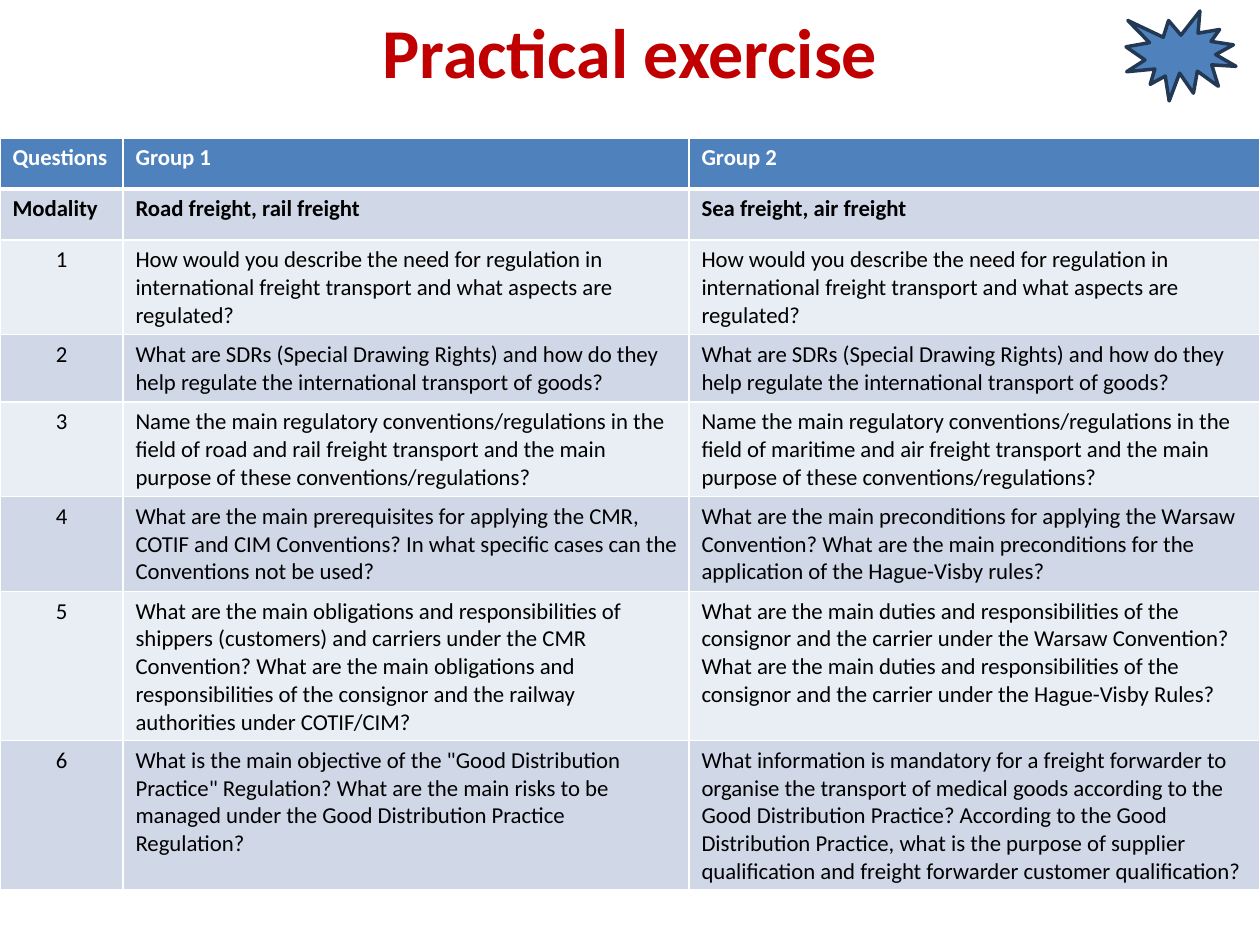
from dataclasses import dataclass
from typing import NamedTuple

from lxml.etree import SubElement
from pptx import Presentation
from pptx.dml.color import RGBColor
from pptx.enum.shapes import MSO_SHAPE as Preset
from pptx.enum.text import MSO_ANCHOR as Anchor, PP_ALIGN as Align
from pptx.oxml.ns import qn
from pptx.util import Emu, Pt


@dataclass(frozen=True)
class Theme:
    font: str = "Calibri"
    title_size: int = 40
    body_size: int = 13
    title: str = "C00000"
    accent: str = "4F81BD"
    outline: str = "233953"
    white: str = "FFFFFF"
    black: str = "000000"
    bands: tuple[str, str] = ("E9EDF4", "D0D8E8")


class Box(NamedTuple):
    left: int
    top: int
    width: int
    height: int


class Row(NamedTuple):
    label: str
    group_1: str
    group_2: str


THEME = Theme()
PX_PER_INCH = 126
SLIDE = (1260, 945)
TITLE_BOX = Box(63, 1, 1134, 100)
STAR_BOX = Box(1126, 11, 110, 90)
TABLE_BOX = Box(0, 138, 1260, 751)
COLUMN_WIDTHS = (123, 566, 571)
ROW_HEIGHT = 51
HEADING_ROWS = 2

REGULATION = (
    "How would you describe the need for regulation in international freight "
    "transport and what aspects are regulated?"
)
DRAWING_RIGHTS = (
    "What are SDRs (Special Drawing Rights) and how do they help regulate the "
    "international transport of goods?"
)
ROWS = (
    Row("Questions", "Group 1", "Group 2"),
    Row("Modality", "Road freight, rail freight", "Sea freight, air freight"),
    Row("1", REGULATION, REGULATION),
    Row("2", DRAWING_RIGHTS, DRAWING_RIGHTS),
    Row(
        "3",
        "Name the main regulatory conventions/regulations in the field of road and "
        "rail freight transport and the main purpose of these conventions/regulations?",
        "Name the main regulatory conventions/regulations in the field of maritime and "
        "air freight transport and the main purpose of these conventions/regulations?",
    ),
    Row(
        "4",
        "What are the main prerequisites for applying the CMR, COTIF and CIM "
        "Conventions? In what specific cases can the Conventions not be used?",
        "What are the main preconditions for applying the Warsaw Convention? What are "
        "the main preconditions for the application of the Hague-Visby rules?",
    ),
    Row(
        "5",
        "What are the main obligations and responsibilities of shippers (customers) "
        "and carriers under the CMR Convention? What are the main obligations and "
        "responsibilities of the consignor and the railway authorities under COTIF/CIM?",
        "What are the main duties and responsibilities of the consignor and the carrier "
        "under the Warsaw Convention? What are the main duties and responsibilities of "
        "the consignor and the carrier under the Hague-Visby Rules?",
    ),
    Row(
        "6",
        'What is the main objective of the "Good Distribution Practice" Regulation? '
        "What are the main risks to be managed under the Good Distribution Practice "
        "Regulation?",
        "What information is mandatory for a freight forwarder to organise the transport "
        "of medical goods according to the Good Distribution Practice? According to the "
        "Good Distribution Practice, what is the purpose of supplier qualification and "
        "freight forwarder customer qualification?",
    ),
)


def px(length: int) -> Emu:
    return Emu(round(length * 914400 / PX_PER_INCH))


def place(box: Box) -> tuple[Emu, ...]:
    return tuple(px(length) for length in box)


def add_run(paragraph, text: str, size: int, color: str, bold: bool) -> None:
    run = paragraph.add_run()
    run.text = text
    run.font.name = THEME.font
    run.font.size = Pt(size)
    run.font.bold = bold
    run.font.color.rgb = RGBColor.from_string(color)


def add_title(slide, text: str) -> None:
    frame = slide.shapes.add_textbox(*place(TITLE_BOX)).text_frame
    frame.word_wrap = True
    frame.vertical_anchor = Anchor.MIDDLE
    paragraph = frame.paragraphs[0]
    paragraph.alignment = Align.CENTER
    add_run(paragraph, text, THEME.title_size, THEME.title, True)


def add_star(slide) -> None:
    shape = slide.shapes.add_shape(Preset.EXPLOSION1, *place(STAR_BOX))
    shape.shadow.inherit = False
    shape.fill.solid()
    shape.fill.fore_color.rgb = RGBColor.from_string(THEME.accent)
    shape.line.color.rgb = RGBColor.from_string(THEME.outline)
    shape.line.width = Pt(2)


def set_borders(cell, top: int, bottom: int) -> None:
    properties = cell._tc.get_or_add_tcPr()
    for side, width in (("L", 1), ("R", 1), ("T", top), ("B", bottom)):
        line = SubElement(properties, qn(f"a:ln{side}"), w=str(Pt(width)))
        fill = SubElement(line, qn("a:solidFill"))
        SubElement(fill, qn("a:srgbClr"), val=THEME.white)


def fill_cell(cell, text: str, row: int, column: int) -> None:
    header = row == 0
    set_borders(cell, top=3 if row == 1 else 1, bottom=3 if header else 1)
    cell.fill.solid()
    background = THEME.accent if header else THEME.bands[row % 2]
    cell.fill.fore_color.rgb = RGBColor.from_string(background)
    paragraph = cell.text_frame.paragraphs[0]
    heading = row < HEADING_ROWS
    if column == 0 and not heading:
        paragraph.alignment = Align.CENTER
    color = THEME.white if header else THEME.black
    add_run(paragraph, text, THEME.body_size, color, heading)


def add_questions(slide) -> None:
    frame = slide.shapes.add_table(len(ROWS), len(COLUMN_WIDTHS), *place(TABLE_BOX))
    table = frame.table
    for column, width in zip(table.columns, COLUMN_WIDTHS):
        column.width = px(width)
    for row_index, row in enumerate(ROWS):
        table.rows[row_index].height = px(ROW_HEIGHT)
        for column_index, text in enumerate(row):
            fill_cell(table.cell(row_index, column_index), text, row_index, column_index)
    frame.height = px(TABLE_BOX.height)


def main() -> None:
    presentation = Presentation()
    presentation.slide_width, presentation.slide_height = map(px, SLIDE)
    slide = presentation.slides.add_slide(presentation.slide_layouts[6])
    add_title(slide, "Practical exercise")
    add_star(slide)
    add_questions(slide)
    presentation.save("out.pptx")


if __name__ == "__main__":
    main()
